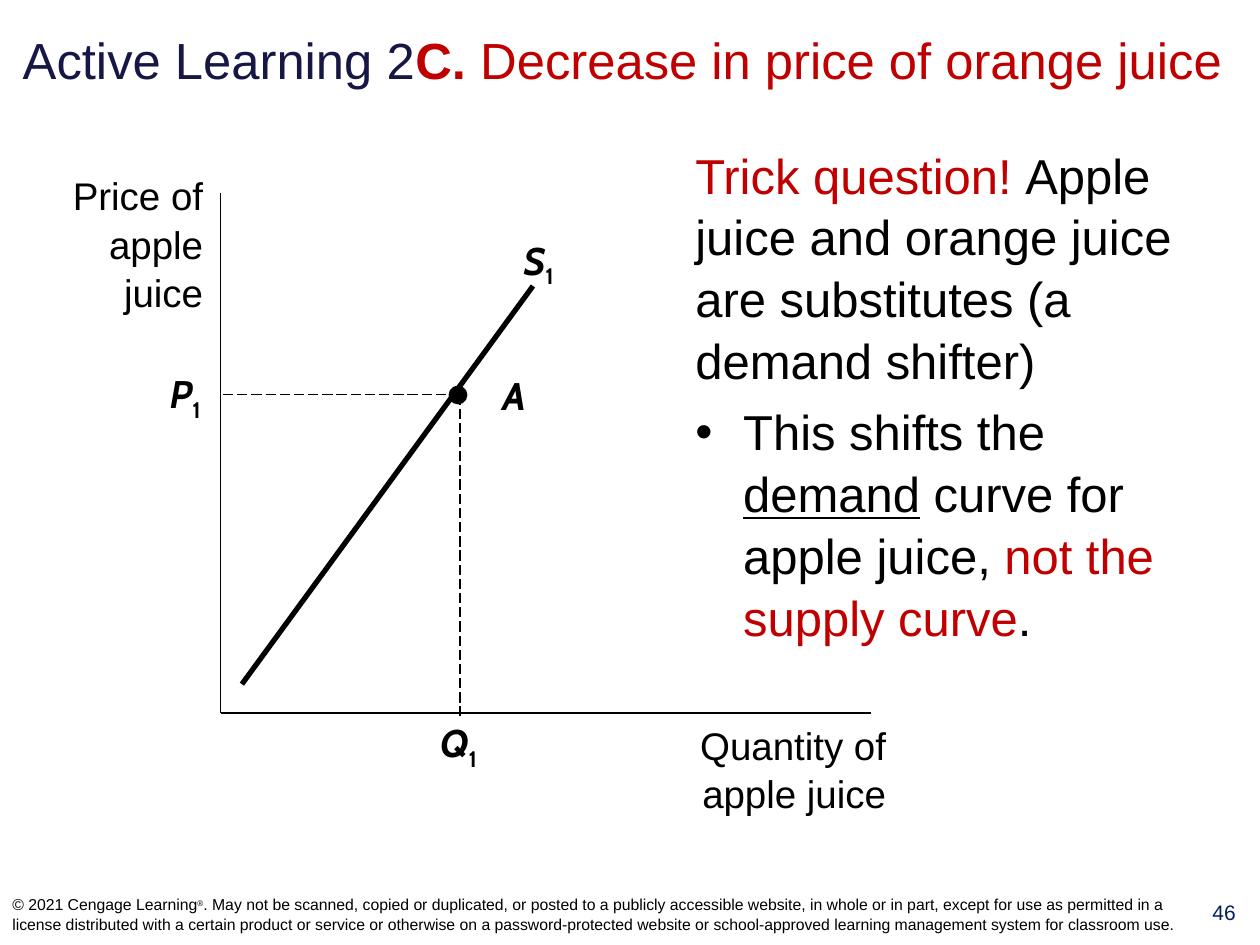
from lxml.etree import SubElement
from pptx import Presentation
from pptx.dml.color import RGBColor
from pptx.enum.dml import MSO_LINE
from pptx.enum.shapes import MSO_CONNECTOR, MSO_SHAPE
from pptx.enum.text import MSO_ANCHOR, PP_ALIGN
from pptx.oxml.ns import qn
from pptx.util import Pt

BLACK, RED, NAVY, BLUE = "000000", "C00000", "171745", "002060"

deck = Presentation()
deck.slide_width, deck.slide_height = Pt(720), Pt(540)
column, row = deck.slide_width / 100, deck.slide_height / 75
page = deck.slides.add_slide(deck.slide_layouts[5])


def place(box, left, top, width, height):
    box.left, box.width = round(left * column), round(width * column)
    box.top, box.height = round(top * row), round(height * row)
    box.text_frame.word_wrap = True
    return box.text_frame


def write(para, spans, size, align=PP_ALIGN.LEFT, name="Arial", spacing=1.05):
    para.alignment = align
    para.line_spacing = spacing
    para.font.size, para.font.name = Pt(size), name
    added = []
    for text, colour in spans:
        span = para.add_run()
        span.text = text
        span.font.color.rgb = RGBColor.from_string(colour)
        added.append(span)
    return added


title = place(page.shapes.title, 0.8, 1.1, 97.5, 7.2)
title.word_wrap = False
title.vertical_anchor = MSO_ANCHOR.MIDDLE
title_spans = write(title.paragraphs[0], [
    ("Active Learning 2", NAVY), ("C.", RED),
    (" Decrease in price of orange juice", RED)], 29, spacing=1.0)
title_spans[1].font.bold = True

answer = place(page.shapes.add_textbox(0, 0, 0, 0), 54.2, 10.8, 43.2, 56.7)
write(answer.paragraphs[0], [
    ("Trick question! ", RED),
    ("Apple juice and orange juice are substitutes (a demand shifter)", BLACK)], 28)
bullet_para = answer.add_paragraph()
bullet_para.space_before = Pt(5.5)
properties = bullet_para._p.get_or_add_pPr()
properties.set("marL", str(round(3.8 * column)))
properties.set("indent", str(round(-3.8 * column)))
SubElement(properties, qn("a:buFont"), typeface="Arial")
SubElement(properties, qn("a:buChar"), char="•")
bullet_spans = write(bullet_para, [
    ("This shifts the ", BLACK), ("demand", BLACK),
    (" curve for apple juice, ", BLACK), ("not the supply curve", RED),
    (".", BLACK)], 28)
bullet_spans[1].font.underline = True

axis_x, axis_y, point_x, point_y = 17.5, 56.6, 36.5, 31.3
for start_x, start_y, end_x, end_y, weight, dash in [
    (axis_x, 15.3, axis_x, axis_y, 1, None),
    (axis_x, axis_y, 69.1, axis_y, 1, None),
    (42.3, 22.7, 19.2, 54.3, 3, None),
    (axis_x + 0.2, point_y, point_x, point_y, 0.75, MSO_LINE.LONG_DASH),
    (point_x, point_y, point_x, axis_y + 0.2, 0.75, MSO_LINE.LONG_DASH),
]:
    line = page.shapes.add_connector(
        MSO_CONNECTOR.STRAIGHT, round(start_x * column), round(start_y * row),
        round(end_x * column), round(end_y * row))
    line.line.color.rgb = RGBColor.from_string(BLACK)
    line.line.width = Pt(weight)
    if dash:
        line.line.dash_style = dash
    SubElement(line._element.spPr, qn("a:effectLst"))

point = page.shapes.add_shape(MSO_SHAPE.OVAL, 0, 0, 0, 0)
place(point, 35.6, 30.6, 1.5, 1.5)
point.shadow.inherit = False
point.fill.solid()
point.fill.fore_color.rgb = RGBColor.from_string(BLACK)
point.line.fill.background()

for text, left, top, width, height in [
    ("Price of apple juice", 1.7, 13, 15.4, 12.1),
    ("Quantity of apple juice", 47.1, axis_y, 24.2, 8.4),
]:
    axis_title = place(page.shapes.add_textbox(0, 0, 0, 0), left, top, width, height)
    write(axis_title.paragraphs[0], [(text, BLACK)], 22, PP_ALIGN.RIGHT)

for letter, subscript, left, top, width in [
    ("S", "1", 39.9, 18.3, 5.7),
    ("P", "1", 11.4, 28.9, 6.6),
    ("Q", "1", 33.1, axis_y, 6.6),
    ("A", "", 37.5, 29, 6.6),
]:
    label = place(page.shapes.add_textbox(0, 0, 0, 0), left, top, width, 4.7)
    parts = [(text, BLACK) for text in (letter, subscript) if text]
    spans = write(label.paragraphs[0], parts, 22, PP_ALIGN.CENTER, "Cabin", 1.0)
    label.paragraphs[0].font.bold = True
    spans[0].font.italic = True
    for span in spans[1:]:
        span.font._element.set("baseline", "-25000")

number = place(page.shapes.add_textbox(0, 0, 0, 0), 94.3, 70.8, 5.7, 4.1)
write(number.paragraphs[0], [("46", BLUE)], 12, PP_ALIGN.CENTER)

notice = place(page.shapes.add_textbox(0, 0, 0, 0), 0, 70, 95, 5)
notice.vertical_anchor = MSO_ANCHOR.MIDDLE
notice_spans = write(notice.paragraphs[0], [
    ("© 2021 Cengage Learning", BLACK), ("®", BLACK),
    (". May not be scanned, copied or duplicated, or posted to a publicly accessible "
     "website, in whole or in part, except for use as permitted in a license distributed "
     "with a certain product or service or otherwise on a password-protected website or "
     "school-approved learning management system for classroom use.", BLACK)], 9)
notice_spans[1].font.size = Pt(8)
notice_spans[1].font._element.set("baseline", "30000")

deck.save("out.pptx")
